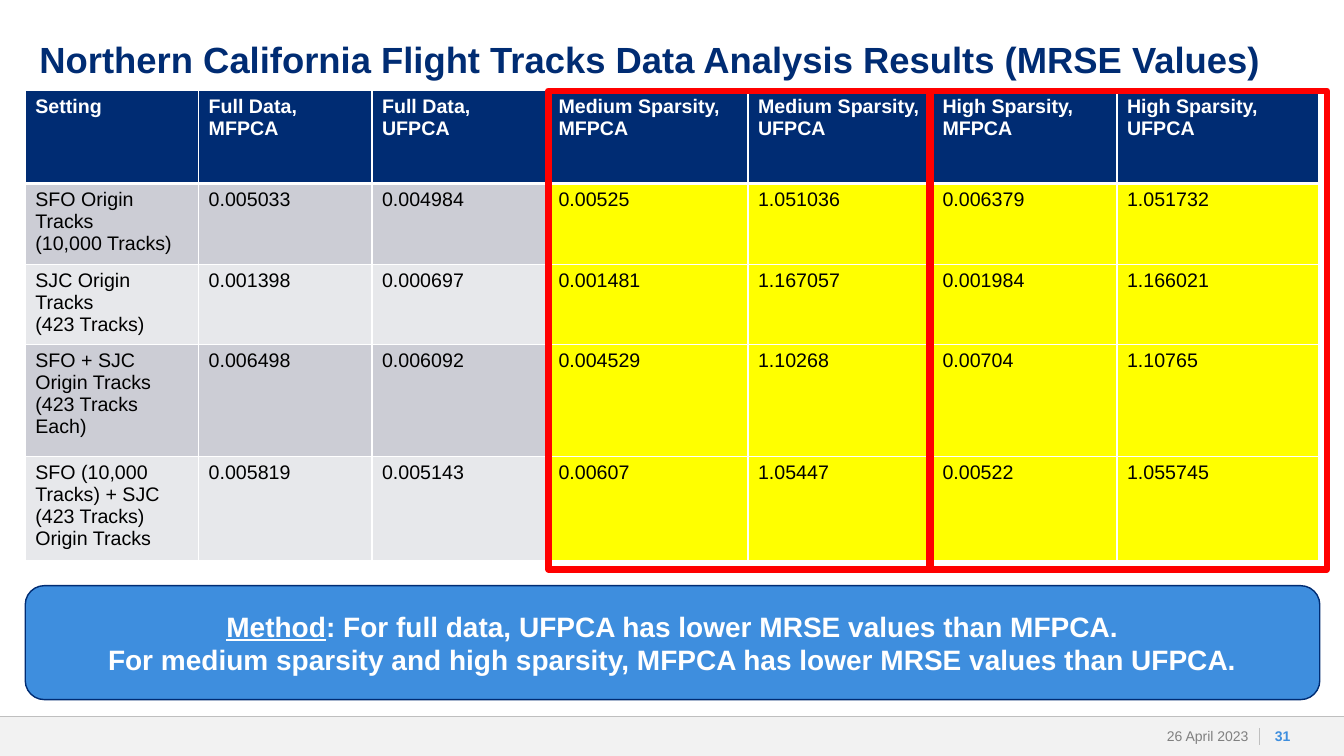
from lxml import etree
from pptx import Presentation
from pptx import util as u
from pptx.dml.color import RGBColor
from pptx.enum import shapes, text
from pptx.oxml.ns import qn

NAVY = RGBColor(0x00, 0x2C, 0x73)
BLUE = RGBColor(0x3E, 0x8E, 0xDE)
RED = RGBColor(0xFF, 0x00, 0x00)
YELLOW = RGBColor(0xFF, 0xFF, 0x00)
WHITE = RGBColor(0xFF, 0xFF, 0xFF)
BLACK = RGBColor(0x00, 0x00, 0x00)
GREY = RGBColor(0x80, 0x80, 0x80)
RULE = RGBColor(0xBF, 0xBF, 0xBF)
FOOTER = RGBColor(0xF2, 0xF2, 0xF2)
BANDS = RGBColor(0xCC, 0xCD, 0xD5), RGBColor(0xE7, 0xE8, 0xEB)

COLUMN_WIDTHS = 12.9, 12.9, 13.13, 14.85, 13.73, 13.73, 15
ROW_HEIGHTS = 12.27, 10.13, 10.13, 14.8, 12.93
FIRST_HIGHLIGHTED = 3
LEVELS = "Full Data", "Medium Sparsity", "High Sparsity"
METHODS = "MFPCA", "UFPCA"
RESULTS = [
    ("SFO Origin Tracks\n(10,000 Tracks)",
     "0.005033", "0.004984", "0.00525", "1.051036", "0.006379", "1.051732"),
    ("SJC Origin Tracks\n(423 Tracks)",
     "0.001398", "0.000697", "0.001481", "1.167057", "0.001984", "1.166021"),
    ("SFO + SJC Origin Tracks\n(423 Tracks Each)",
     "0.006498", "0.006092", "0.004529", "1.10268", "0.00704", "1.10765"),
    ("SFO (10,000 Tracks) + SJC (423 Tracks) Origin Tracks",
     "0.005819", "0.005143", "0.00607", "1.05447", "0.00522", "1.055745"),
]


def write(frame, content, size=14, color=BLACK, bold=False, align=text.PP_ALIGN.LEFT,
          spacing=None, underlined=None):
    for index, line in enumerate(content.split("\n")):
        paragraph = frame.paragraphs[0] if index == 0 else frame.add_paragraph()
        paragraph.alignment = align
        if spacing:
            paragraph.line_spacing = spacing
        before, mark, after = line.partition(underlined) if underlined else (line, "", "")
        for part in filter(None, (before, mark, after)):
            run = paragraph.add_run()
            run.text = part
            run.font.name = "Arial"
            run.font.size = u.Pt(size)
            run.font.bold = bold
            run.font.color.rgb = color
            run.font.underline = part == underlined


class Deck:
    """Holds the presentation and current slide; lengths are percentages of the slide."""

    def __init__(self):
        self.presentation = Presentation()
        self.presentation.slide_width = u.Inches(13.33)
        self.presentation.slide_height = u.Inches(7.5)
        self.slide = self.presentation.slides.add_slide(self.presentation.slide_layouts[6])

    def across(self, share):
        return round(self.presentation.slide_width * share / 100)

    def down(self, share):
        return round(self.presentation.slide_height * share / 100)

    def box(self, left, top, width, height):
        return self.across(left), self.down(top), self.across(width), self.down(height)

    def shape(self, bounds, fill=None, line=None, weight=1, kind=shapes.MSO_SHAPE.RECTANGLE):
        shape = self.slide.shapes.add_shape(kind, *self.box(*bounds))
        shape.shadow.inherit = False
        if fill is None:
            shape.fill.background()
        else:
            shape.fill.solid()
            shape.fill.fore_color.rgb = fill
        if line is None:
            shape.line.fill.background()
        else:
            shape.line.color.rgb = line
            shape.line.width = u.Pt(weight)
        return shape

    def line(self, left, top, right, bottom):
        line = self.slide.shapes.add_connector(
            shapes.MSO_CONNECTOR.STRAIGHT, self.across(left), self.down(top),
            self.across(right), self.down(bottom))
        line.line.color.rgb = RULE
        line.line.width = u.Pt(0.5)
        etree.SubElement(line._element.spPr, qn("a:effectLst"))

    def label(self, bounds, content, anchor=text.MSO_ANCHOR.MIDDLE, inset=0, **style):
        frame = self.slide.shapes.add_textbox(*self.box(*bounds)).text_frame
        frame.word_wrap = True
        frame.vertical_anchor = anchor
        frame.margin_left = frame.margin_right = u.Inches(inset)
        frame.margin_top = frame.margin_bottom = 0
        write(frame, content, **style)

    def borders(self, cell, **weights):
        properties = cell._tc.get_or_add_tcPr()
        for side in "LRTB":
            edge = etree.SubElement(properties, qn(f"a:ln{side}"),
                                    w=str(u.Pt(weights.get(side, 1))))
            fill = etree.SubElement(edge, qn("a:solidFill"))
            etree.SubElement(fill, qn("a:srgbClr"), val=str(WHITE))

    def table(self, left, top, rows):
        bounds = self.box(left, top, sum(COLUMN_WIDTHS), sum(ROW_HEIGHTS))
        table = self.slide.shapes.add_table(len(rows), len(rows[0]), *bounds).table
        table.horz_banding = False
        for column, width in zip(table.columns, COLUMN_WIDTHS):
            column.width = self.across(width)
        for row, height in zip(table.rows, ROW_HEIGHTS):
            row.height = self.down(height)
        for i, values in enumerate(rows):
            for j, value in enumerate(values):
                cell = table.cell(i, j)
                header = i == 0
                self.borders(cell, B=3 if header else 1, T=3 if i == 1 else 1)
                highlighted = j >= FIRST_HIGHLIGHTED
                cell.fill.solid()
                cell.fill.fore_color.rgb = (
                    NAVY if header else YELLOW if highlighted else BANDS[(i - 1) % 2])
                write(cell.text_frame, value, color=WHITE if header else BLACK, bold=header)


def main():
    deck = Deck()
    deck.shape((0, 94.8, 100, 5.2), fill=FOOTER)
    deck.line(0, 94.8, 100, 94.8)
    deck.line(93.7, 96.27, 93.7, 98.53)
    deck.label((82.37, 94.8, 11.25, 5.2), "26 April 2023", inset=0.1,
               size=10, color=GREY, align=text.PP_ALIGN.RIGHT)
    deck.label((93.85, 94.8, 3.15, 5.2), "31",
               size=10, color=BLUE, bold=True, align=text.PP_ALIGN.CENTER)
    deck.label((2.93, 5.6, 92.5, 11.07),
               "Northern California Flight Tracks Data Analysis Results (MRSE Values)",
               anchor=text.MSO_ANCHOR.TOP, size=26, color=NAVY, bold=True, spacing=0.9)

    header = ["Setting"] + [f"{level},\n{method}" for level in LEVELS for method in METHODS]
    deck.table(1.88, 12, [header, *RESULTS])
    for left, width in ((40.81, 28.43), (69.17, 29.56)):
        deck.shape((left, 12, width, 63.33), line=RED, weight=4.5)

    conclusion = deck.shape((1.88, 77.47, 96.32, 15.07), fill=BLUE, line=NAVY,
                            kind=shapes.MSO_SHAPE.ROUNDED_RECTANGLE)
    conclusion.text_frame.word_wrap = True
    conclusion.text_frame.vertical_anchor = text.MSO_ANCHOR.MIDDLE
    write(conclusion.text_frame,
          "Method: For full data, UFPCA has lower MRSE values than MFPCA.\n"
          "For medium sparsity and high sparsity, MFPCA has lower MRSE values than UFPCA.",
          size=20, color=WHITE, bold=True, align=text.PP_ALIGN.CENTER, underlined="Method")
    deck.presentation.save("out.pptx")


if __name__ == "__main__":
    main()
